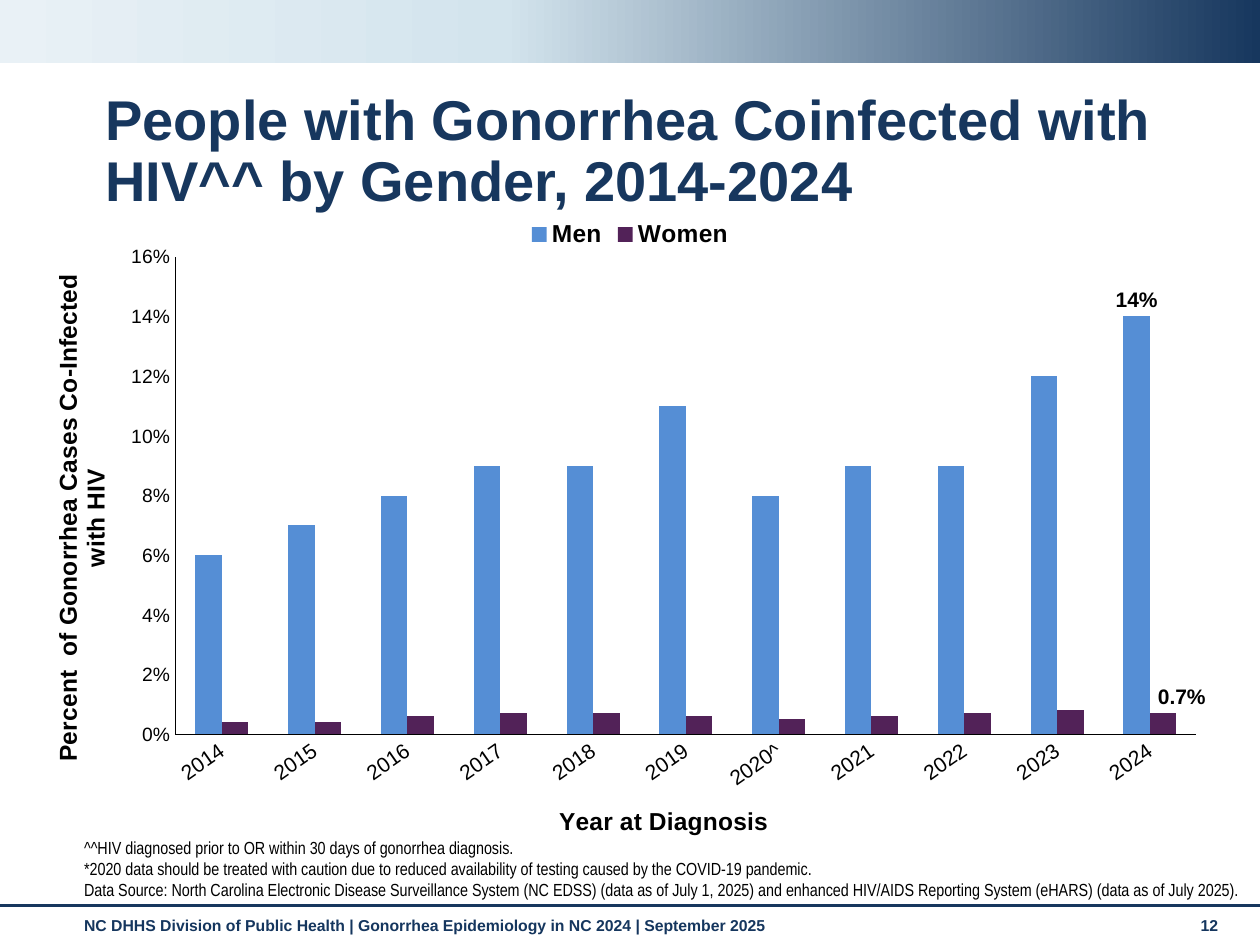
import copy

import lxml.etree
import pptx
import pptx.chart.data
import pptx.dml.color
import pptx.enum.chart
import pptx.enum.shapes
import pptx.enum.text
import pptx.oxml
import pptx.oxml.ns
import pptx.util

Pt = pptx.util.Pt
qn = pptx.oxml.ns.qn
ANCHOR = pptx.enum.text.MSO_ANCHOR
COLORS = {
    "navy": "17375E",
    "footer": "15365E",
    "pale": "D3E4ED",
    "mist": "E9F1F6",
    "black": "000000",
    "men": "558ED5",
    "women": "522258",
}
YEARS = ["2014", "2015", "2016", "2017", "2018", "2019", "2020^",
         "2021", "2022", "2023", "2024"]
GENDERS = [
    ("Men", [0.06, 0.07, 0.08, 0.09, 0.09, 0.11, 0.08, 0.09, 0.09, 0.12, 0.14],
     "men", "0%", 0),
    ("Women", [0.004, 0.004, 0.006, 0.007, 0.007, 0.006, 0.005, 0.006, 0.007,
               0.008, 0.007], "women", "0.0%", 0.016),
]
FOOTNOTES = """^^HIV diagnosed prior to OR within 30 days of gonorrhea diagnosis.
*2020 data should be treated with caution due to reduced availability of testing caused by the COVID-19 pandemic.
Data Source: North Carolina Electronic Disease Surveillance System (NC EDSS) (data as of July 1, 2025) and enhanced HIV/AIDS Reporting System (eHARS) (data as of July 2025)."""


def rgb(name):
    return pptx.dml.color.RGBColor.from_string(COLORS[name])


def set_font(font, size, color="black", bold=False, name="Arial"):
    font.size, font.bold, font.name = Pt(size), bold, name
    font.color.rgb = rgb(color)


def write(frame, text, spacing=None, **style):
    frame.text = text
    for paragraph in frame.paragraphs:
        paragraph.alignment = pptx.enum.text.PP_ALIGN.LEFT
        if spacing:
            paragraph.line_spacing = spacing
        for run in paragraph.runs:
            set_font(run.font, **style)


def manual_layout(**values):
    layout = pptx.oxml.parse_xml(
        '<c:layout xmlns:c="http://schemas.openxmlformats.org/drawingml/2006/chart">'
        "<c:manualLayout/></c:layout>")
    for tag, value in values.items():
        lxml.etree.SubElement(layout[0], qn("c:" + tag)).set("val", str(value))
    return layout


class SlideBuilder:
    def __init__(self, slide):
        self.slide = slide

    def title(self, text, left, top, width, height):
        heading = self.slide.shapes.title
        heading.left, heading.top = Pt(left), Pt(top)
        heading.width, heading.height = Pt(width), Pt(height)
        frame = heading.text_frame
        frame.auto_size = pptx.enum.text.MSO_AUTO_SIZE.NONE
        frame.word_wrap, frame.vertical_anchor = True, ANCHOR.TOP
        write(frame, text, spacing=0.9, size=32, color="navy", bold=True)

    def text(self, text, left, top, width, height, anchor=ANCHOR.TOP, **style):
        frame = self.slide.shapes.add_textbox(
            Pt(left), Pt(top), Pt(width), Pt(height)).text_frame
        frame.word_wrap, frame.vertical_anchor = True, anchor
        write(frame, text, **style)

    def gradient_band(self, width, height, stops):
        band = self.slide.shapes.add_shape(
            pptx.enum.shapes.MSO_SHAPE.RECTANGLE, 0, 0, Pt(width), Pt(height))
        band.shadow.inherit = False
        band.line.fill.background()
        band.fill.gradient()
        band.fill.gradient_angle = 180
        first = band.fill.gradient_stops[0]._gs
        first.addnext(copy.deepcopy(first))
        for stop, (position, color) in zip(band.fill.gradient_stops, stops):
            stop.position, stop.color.rgb = position, rgb(color)

    def rule(self, top, width, weight):
        line = self.slide.shapes.add_connector(
            pptx.enum.shapes.MSO_CONNECTOR.STRAIGHT, 0, Pt(top), Pt(width), Pt(top))
        line.line.width, line.line.color.rgb = Pt(weight), rgb("navy")
        lxml.etree.SubElement(line._element.spPr, qn("a:effectLst"))

    def axis(self, axis, title, title_angle, size):
        axis.has_major_gridlines = False
        axis.major_tick_mark = pptx.enum.chart.XL_TICK_MARK.NONE
        axis.format.line.width, axis.format.line.color.rgb = Pt(0.25), rgb("black")
        set_font(axis.tick_labels.font, size)
        frame = axis.axis_title.text_frame
        write(frame, title, size=14, bold=True)
        frame.paragraphs[0].alignment = pptx.enum.text.PP_ALIGN.CENTER
        frame._txBody.bodyPr.set("rot", str(title_angle * 60000))

    def last_label(self, series, number_format, shift):
        label = series.points[len(YEARS) - 1].data_label
        set_font(label.font, 12, bold=True)
        label.position = pptx.enum.chart.XL_LABEL_POSITION.OUTSIDE_END
        node = label._dLbl
        code = pptx.oxml.parse_xml(
            '<c:numFmt xmlns:c="http://schemas.openxmlformats.org/drawingml/2006/chart"'
            f' formatCode="{number_format}" sourceLinked="0"/>')
        node.insert(1, code)
        if shift:
            node.insert(1, manual_layout(x=shift, y=0))

    def column_chart(self, left, top, width, height):
        data = pptx.chart.data.CategoryChartData()
        data.categories = YEARS
        for name, values, _, number_format, _ in GENDERS:
            data.add_series(name, values, number_format)
        chart = self.slide.shapes.add_chart(
            pptx.enum.chart.XL_CHART_TYPE.COLUMN_CLUSTERED,
            Pt(left), Pt(top), Pt(width), Pt(height), data).chart
        set_font(chart.font, 12, bold=True)
        chart.has_title = False
        chart.has_legend = True
        chart.legend.position = pptx.enum.chart.XL_LEGEND_POSITION.TOP
        chart.legend.include_in_layout = False
        set_font(chart.legend.font, 14, bold=True)

        years, percent = chart.category_axis, chart.value_axis
        self.axis(years, "Year at Diagnosis", 0, 12)
        self.axis(percent, "Percent  of Gonorrhea Cases Co-Infected with HIV", -90, 11)
        years._element.find(qn("c:txPr")).find(qn("a:bodyPr")).set("rot", str(-35 * 60000))
        percent.minimum_scale, percent.maximum_scale = 0, 0.16
        percent.major_unit = 0.02
        percent.tick_labels.number_format = "0%"
        percent.tick_labels.number_format_is_linked = False

        plot = chart.plots[0]
        plot.gap_width, plot.overlap, plot.vary_by_categories = 150, 0, False
        for series, (_, _, color, number_format, shift) in zip(plot.series, GENDERS):
            series.format.fill.solid()
            series.format.fill.fore_color.rgb = rgb(color)
            self.last_label(series, number_format, shift)

        area = chart._chartSpace.chart.plotArea
        for old in area.findall(qn("c:layout")):
            area.remove(old)
        area.insert(0, manual_layout(layoutTarget="inner", xMode="edge", yMode="edge",
                                     x=0.11, y=0.079, w=0.876, h=0.75))


def main():
    deck = pptx.Presentation()
    deck.slide_width, deck.slide_height = Pt(720), Pt(540)
    page = SlideBuilder(deck.slides.add_slide(deck.slide_layouts[5]))
    footer = {"size": 9, "color": "footer", "bold": True}
    page.text("NC DHHS Division of Public Health | Gonorrhea Epidemiology in NC 2024 "
              "| September 2025", 41, 520, 629, 21, **footer)
    page.text("12", 679, 520, 32, 21, **footer)
    page.gradient_band(720, 36, [(0, "navy"), (0.6, "pale"), (1, "mist")])
    page.rule(517.5, 720, 1.75)
    page.title("People with Gonorrhea Coinfected with HIV^^ by Gender, 2014-2024",
               53, 49, 657, 43)
    page.text(FOOTNOTES, 41, 503, 679, 15, anchor=ANCHOR.BOTTOM,
              size=10, name="Arial Narrow")
    page.column_chart(27, 118, 666, 364)
    deck.save("out.pptx")


if __name__ == "__main__":
    main()
